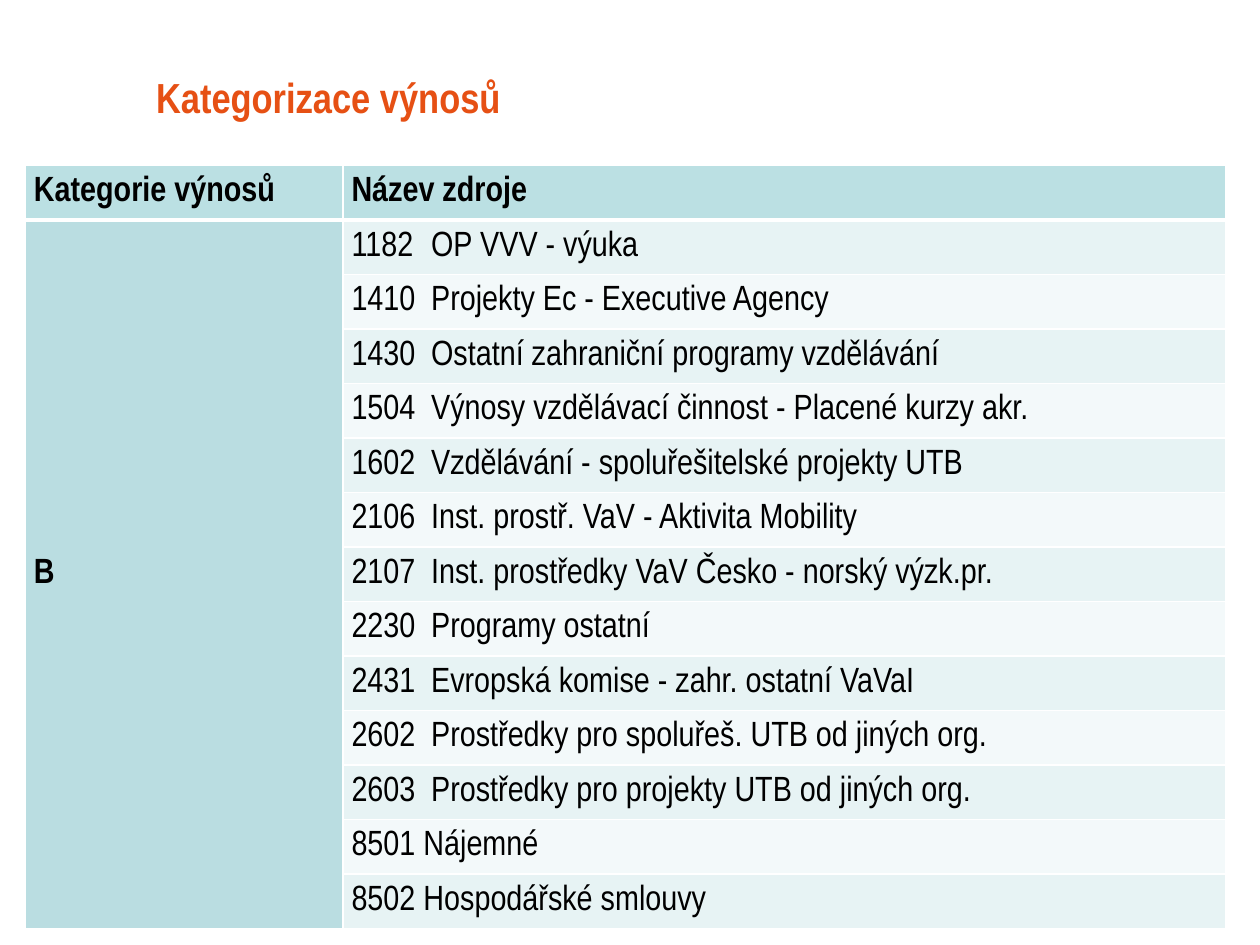
from dataclasses import dataclass

from lxml import etree
from pptx import Presentation
from pptx import util as u
from pptx.dml.color import RGBColor
from pptx.enum import text
from pptx.oxml import ns

FONT = "Arial Narrow"
HEADER_FILL, CATEGORY_FILL = "BBE0E3", "BADDE1"
BAND_FILLS = ("E7F3F4", "F3F9FA")
ROW_HEIGHT = 31.17
COLUMN_WIDTHS = (181.5, 504.7)
NAME_TAB = 45.5


@dataclass
class Source:
    code: str
    name: str
    separator: str = "\t"
    justified: bool = True


SOURCES = [
    Source("1182", "OP VVV - výuka"),
    Source("1410", "Projekty Ec - Executive Agency"),
    Source("1430", "Ostatní zahraniční programy vzdělávání"),
    Source("1504", "Výnosy vzdělávací činnost - Placené kurzy akr."),
    Source("1602", "Vzdělávání - spoluřešitelské projekty UTB"),
    Source("2106", "Inst. prostř. VaV - Aktivita Mobility"),
    Source("2107", "Inst. prostředky VaV Česko - norský výzk.pr."),
    Source("2230", "Programy ostatní", justified=False),
    Source("2431", "Evropská komise - zahr. ostatní VaVaI"),
    Source("2602", "Prostředky pro spoluřeš. UTB od jiných org."),
    Source("2603", "Prostředky pro projekty UTB od jiných org."),
    Source("8501", "Nájemné", separator=" "),
    Source("8502", "Hospodářské smlouvy", separator=" "),
]


def color(value: str) -> RGBColor:
    return RGBColor.from_string(value)


def add_run(paragraph, content: str, size: float, fill: str, bold: bool) -> None:
    run = paragraph.add_run()
    run.text = content
    run.font.name = FONT
    run.font.size = u.Pt(size)
    run.font.bold = bold
    run.font.color.rgb = color(fill)


def set_borders(cell, top: float = 1, bottom: float = 1) -> None:
    properties = cell._tc.get_or_add_tcPr()
    for side, width in (("L", 1), ("R", 1), ("T", top), ("B", bottom)):
        line = etree.SubElement(properties, ns.qn(f"a:ln{side}"), w=str(u.Pt(width)))
        fill = etree.SubElement(line, ns.qn("a:solidFill"))
        etree.SubElement(fill, ns.qn("a:srgbClr"), val="FFFFFF")


def add_tab_stop(paragraph, position: float) -> None:
    properties = paragraph._p.get_or_add_pPr()
    tabs = etree.SubElement(properties, ns.qn("a:tabLst"))
    etree.SubElement(tabs, ns.qn("a:tab"), pos=str(u.Pt(position)), algn="l")


def fill_cell(cell, content: str, fill: str, bold: bool = False, justified: bool = True) -> None:
    cell.fill.solid()
    cell.fill.fore_color.rgb = color(fill)
    cell.margin_left = cell.margin_right = u.Pt(5)
    cell.margin_top = cell.margin_bottom = 0
    cell.vertical_anchor = text.MSO_ANCHOR.MIDDLE
    paragraph = cell.text_frame.paragraphs[0]
    paragraph.alignment = text.PP_ALIGN.JUSTIFY if justified else text.PP_ALIGN.LEFT
    if "\t" in content:
        add_tab_stop(paragraph, NAME_TAB)
    add_run(paragraph, content, 20, "000000", bold)


def add_title(slide, content: str) -> None:
    title = slide.shapes.title
    title.left, title.top = u.Pt(82), u.Pt(26)
    title.width, title.height = u.Pt(584), u.Pt(58.5)
    title.text_frame.vertical_anchor = text.MSO_ANCHOR.MIDDLE
    paragraph = title.text_frame.paragraphs[0]
    paragraph.alignment = text.PP_ALIGN.LEFT
    add_run(paragraph, content, 24, "E65014", True)


def add_revenue_table(slide) -> None:
    row_count = len(SOURCES) + 1
    table = slide.shapes.add_table(
        row_count, 2, u.Pt(14.4), u.Pt(94.5),
        u.Pt(sum(COLUMN_WIDTHS)), u.Pt(ROW_HEIGHT * row_count),
    ).table
    for column, width in zip(table.columns, COLUMN_WIDTHS):
        column.width = u.Pt(width)
    for index, row in enumerate(table.rows):
        row.height = u.Pt(ROW_HEIGHT)
        for cell in row.cells:
            # Thick rule between the header and the body
            set_borders(cell, top=3 if index == 1 else 1, bottom=3 if index == 0 else 1)

    # Header row
    for column, heading in enumerate(("Kategorie výnosů", "Název zdroje")):
        fill_cell(table.cell(0, column), heading, HEADER_FILL, bold=True)

    # Category cell spanning all sources
    category = table.cell(1, 0)
    category.merge(table.cell(row_count - 1, 0))
    fill_cell(category, "B", CATEGORY_FILL, bold=True, justified=False)

    # Banded source rows
    for index, source in enumerate(SOURCES):
        fill_cell(
            table.cell(index + 1, 1), source.code + source.separator + source.name,
            BAND_FILLS[index % 2], justified=source.justified,
        )


def main() -> None:
    presentation = Presentation()
    presentation.slide_width, presentation.slide_height = u.Pt(720), u.Pt(540)
    slide = presentation.slides.add_slide(presentation.slide_layouts[5])
    add_title(slide, "Kategorizace výnosů")
    add_revenue_table(slide)
    presentation.save("out.pptx")


if __name__ == "__main__":
    main()
